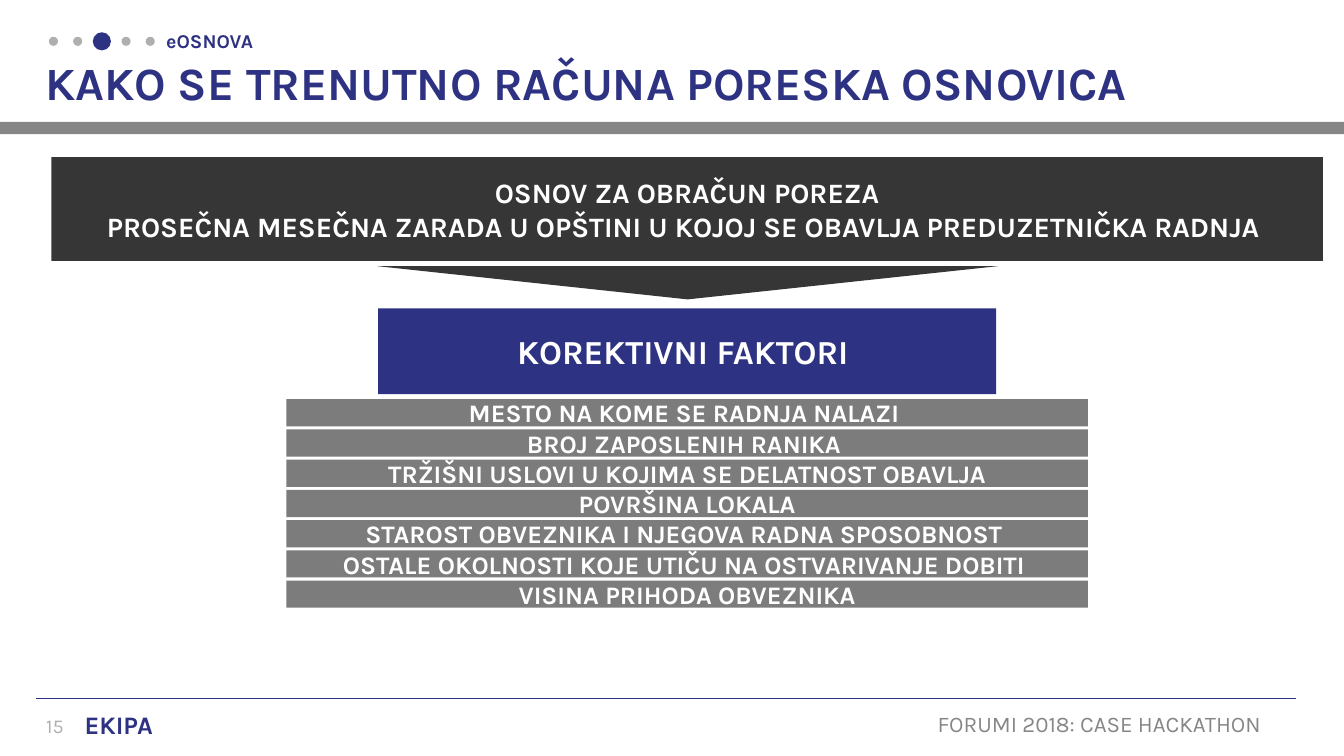
from lxml.etree import SubElement
from pptx import Presentation
from pptx.dml.color import RGBColor
from pptx.enum.shapes import MSO_CONNECTOR as Line, MSO_SHAPE as Shape
from pptx.enum.text import MSO_ANCHOR as Anchor, MSO_AUTO_SIZE as Fit, PP_ALIGN as Align
from pptx.oxml.ns import qn
from pptx.util import Inches, Pt

FONT = "Karla"
BLUE, DARK, WHITE = "2E3282", "363636", "FFFFFF"
GREY, PALE, BAND = "868686", "AFAFAF", "7C7C7C"

FACTORS = [
    "MESTO NA KOME SE RADNJA NALAZI ",
    "BROJ ZAPOSLENIH RANIKA ",
    "TRŽIŠNI USLOVI U KOJIMA SE DELATNOST OBAVLJA",
    "POVRŠINA LOKALA",
    "STAROST OBVEZNIKA I NJEGOVA RADNA SPOSOBNOST ",
    "OSTALE OKOLNOSTI KOJE UTIČU NA OSTVARIVANJE DOBITI ",
    "VISINA PRIHODA OBVEZNIKA",
]


def paint(target, color):
    """Give a fill, line or font a solid colour."""
    if hasattr(target, "solid"):
        target.solid()
        target.fore_color.rgb = RGBColor.from_string(color)
    else:
        target.color.rgb = RGBColor.from_string(color)


def write(frame, lines, size, color, bold=True, align=Align.LEFT, space=None):
    frame.text = "\n".join(lines)
    for para in frame.paragraphs:
        para.alignment = align
        para.line_spacing = space
        para.font.name = FONT
        para.font.size = Pt(size)
        para.font.bold = bold
        paint(para.font, color)


def add_block(slide, kind, box, color, lines=(), size=18):
    block = slide.shapes.add_shape(kind, *map(Inches, box))
    block.shadow.inherit = False
    paint(block.fill, color)
    block.line.fill.background()
    if lines:
        frame = block.text_frame
        frame.vertical_anchor = Anchor.MIDDLE
        write(frame, lines, size, WHITE, align=Align.CENTER)
    return block


def add_label(slide, box, text, size, color, bold=False, wrap=True, space=None):
    frame = slide.shapes.add_textbox(*map(Inches, box)).text_frame
    frame.word_wrap = wrap
    write(frame, [text], size, color, bold, space=space)


def add_rule(slide, left, right, top):
    rule = slide.shapes.add_connector(
        Line.STRAIGHT, Inches(left), Inches(top), Inches(right), Inches(top))
    paint(rule.line, BLUE)
    rule.line.width = Pt(0.5)
    SubElement(rule._element.spPr, qn("a:effectLst"))


def set_title(slide, text):
    title = slide.shapes.title
    title.left, title.top, title.width, title.height = map(
        Inches, (0.35, 0.58, 12.64, 0.57))
    frame = title.text_frame
    frame.auto_size = Fit.NONE
    frame.word_wrap = True
    frame.vertical_anchor = Anchor.BOTTOM
    write(frame, [text], 33, BLUE, space=0.9)


def add_dots(slide, count, active):
    for i in range(count):
        size, color = (0.18, BLUE) if i == active else (0.09, PALE)
        left = 0.53 + 0.24 * i - size / 2
        add_block(slide, Shape.OVAL, (left, 0.41 - size / 2, size, size), color)


def add_header(slide):
    add_dots(slide, 5, 2)
    add_label(slide, (1.55, 0.26, 5.11, 0.28), "eOSNOVA", 14, BLUE, bold=True, space=0.9)
    add_block(slide, Shape.RECTANGLE, (0, 1.21, 13.33, 0.12), GREY)
    set_title(slide, "KAKO SE TRENUTNO RAČUNA PORESKA OSNOVICA")


def add_footer(slide):
    add_rule(slide, 0.36, 12.85, 6.93)
    add_label(slide, (0.36, 7.03, 1.03, 0.4), "15", 14, PALE)
    add_label(slide, (0.74, 6.99, 0.97, 0.4), "EKIPA", 18, BLUE, bold=True, wrap=False)
    add_label(slide, (9.2, 7, 3.65, 0.37), "FORUMI 2018: CASE HACKATHON", 16, GREY, wrap=False)


def add_flow(slide):
    add_block(slide, Shape.RECTANGLE, (0.51, 1.56, 12.61, 1.03), DARK, [
        "OSNOV ZA OBRAČUN POREZA",
        "PROSEČNA MESEČNA ZARADA U OPŠTINI U KOJOJ SE OBAVLJA PREDUZETNIČKA RADNJA ",
    ], 20)
    arrow = add_block(slide, Shape.ISOSCELES_TRIANGLE, (3.74, 2.64, 6.16, 0.33), DARK)
    arrow.rotation = 180
    add_block(slide, Shape.RECTANGLE, (3.75, 3.06, 6.13, 0.85), BLUE,
              ["KOREKTIVNI FAKTORI "], 24)
    for i, factor in enumerate(FACTORS):
        add_block(slide, Shape.RECTANGLE, (2.84, 3.96 + 0.3 * i, 7.95, 0.27), BAND, [factor])


def main():
    prs = Presentation()
    prs.slide_width, prs.slide_height = Inches(13.33), Inches(7.5)
    slide = prs.slides.add_slide(prs.slide_layouts[5])
    add_footer(slide)
    add_header(slide)
    add_flow(slide)
    prs.save("out.pptx")


if __name__ == "__main__":
    main()
